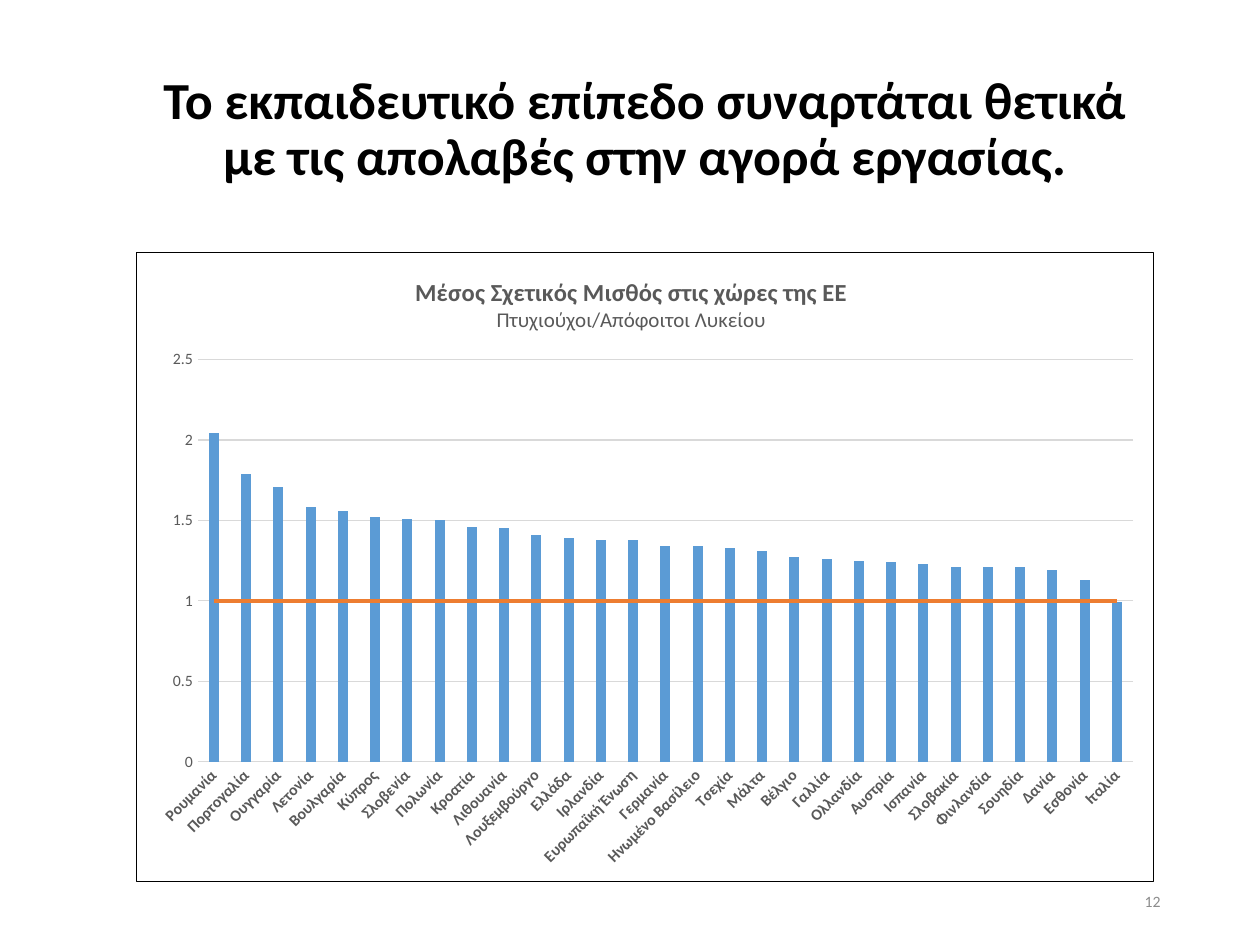
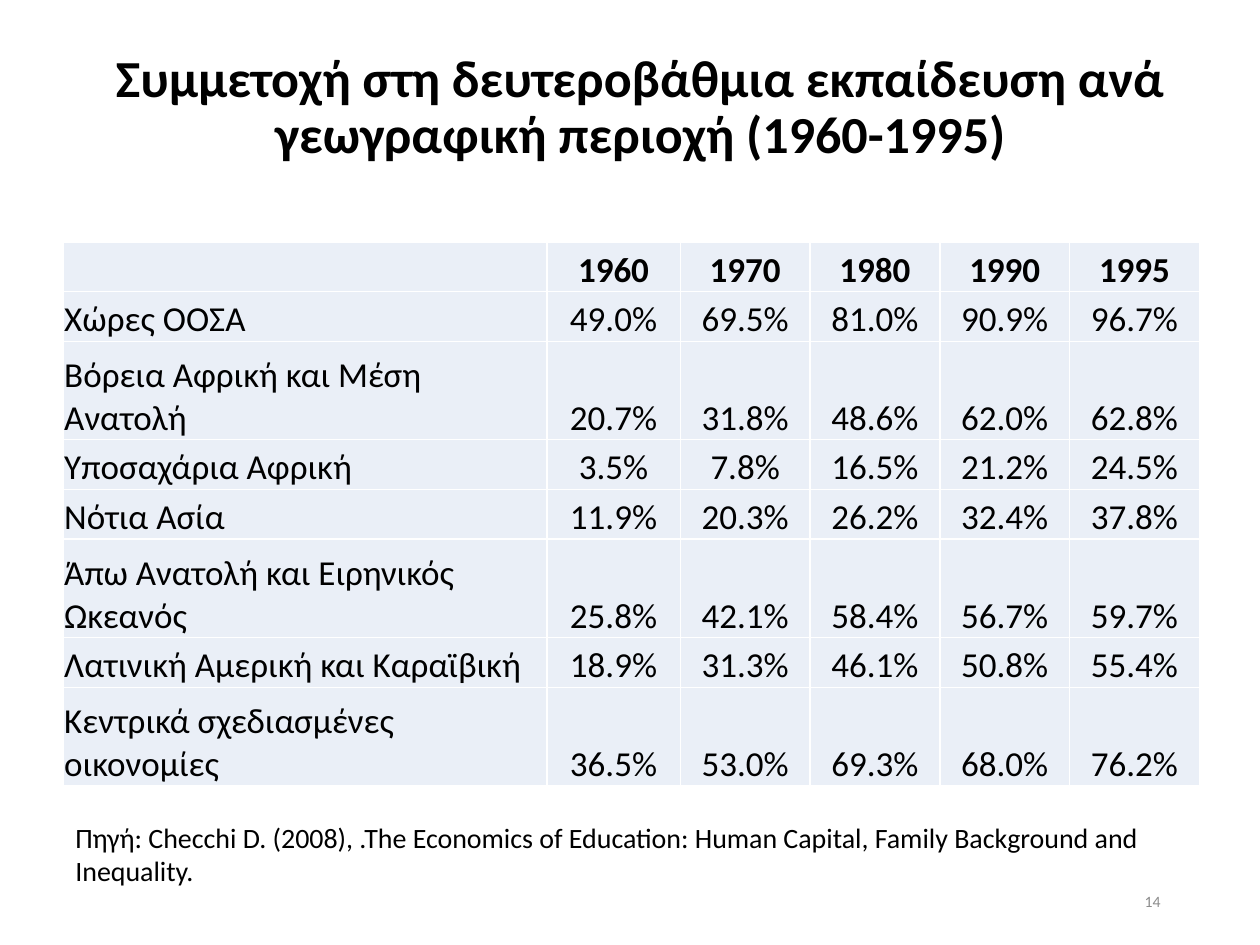
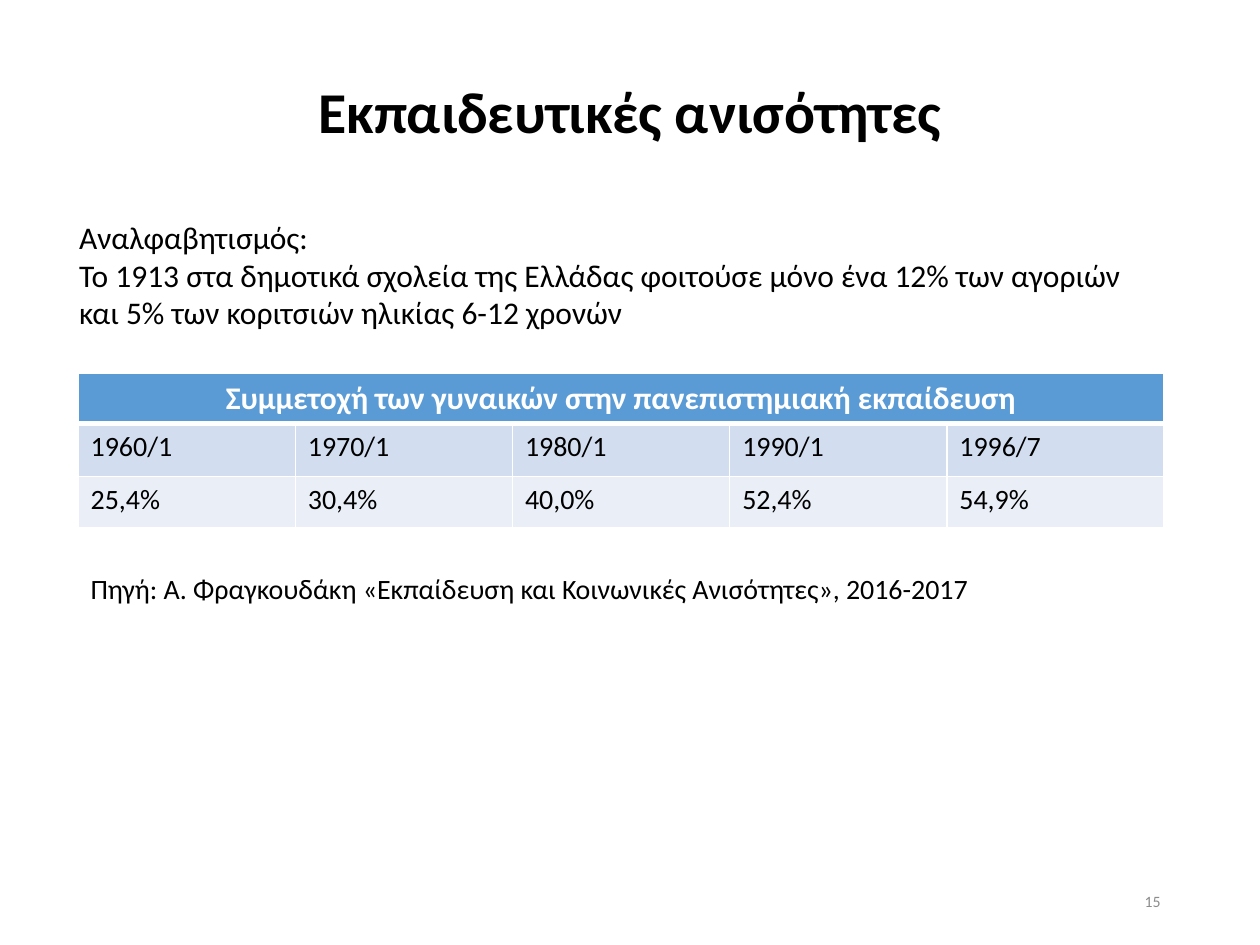
"""Build three slides on earnings, school enrolment and inequality in education."""
from copy import deepcopy
from dataclasses import dataclass

from lxml import etree
from pptx import Presentation
from pptx.chart.data import CategoryChartData
from pptx.dml.color import RGBColor
from pptx.enum.chart import XL_CHART_TYPE, XL_MARKER_STYLE, XL_TICK_MARK
from pptx.enum.text import MSO_ANCHOR, PP_ALIGN
from pptx.oxml import parse_xml
from pptx.oxml.ns import nsdecls, qn
from pptx.util import Inches, Pt

LEFT, CENTER, RIGHT = PP_ALIGN.LEFT, PP_ALIGN.CENTER, PP_ALIGN.RIGHT
TOP, MIDDLE, BOTTOM = MSO_ANCHOR.TOP, MSO_ANCHOR.MIDDLE, MSO_ANCHOR.BOTTOM
COLUMNS, LINE = XL_CHART_TYPE.COLUMN_CLUSTERED, XL_MARKER_STYLE.NONE
NO_TICKS = XL_TICK_MARK.NONE


@dataclass(frozen=True)
class Theme:
    font: str = "Calibri"
    black: RGBColor = RGBColor(0, 0, 0)
    white: RGBColor = RGBColor(0xFF, 0xFF, 0xFF)
    gray: RGBColor = RGBColor(0x8C, 0x8C, 0x8C)
    chart_text: RGBColor = RGBColor(0x59, 0x59, 0x59)
    grid: RGBColor = RGBColor(0xD9, 0xD9, 0xD9)
    blue: RGBColor = RGBColor(0x5B, 0x9B, 0xD5)
    orange: RGBColor = RGBColor(0xED, 0x7D, 0x31)
    band: RGBColor = RGBColor(0xD2, 0xDE, 0xEF)
    pale: RGBColor = RGBColor(0xEA, 0xEF, 0xF7)
    heading: float = 33
    long_heading: float = 29.7
    table: float = 20
    body: float = 18
    source: float = 16
    chart_title: float = 14
    chart_subtitle: float = 12
    chart: float = 10
    small: float = 9


theme = Theme()
presentation = Presentation()
presentation.slide_width, presentation.slide_height = Inches(10), Inches(7.5)
column = presentation.slide_width / 100
row = presentation.slide_height / 75


def add_text(slide, box, lines, size, color=theme.black, bold=False,
             align=LEFT, anchor=TOP, spacing=1.0):
    """Add a text box whose place is given in grid columns and rows."""
    left, top, width, height = box
    shape = slide.shapes.add_textbox(int(left * column), int(top * row),
                                     int(width * column), int(height * row))
    frame = shape.text_frame
    frame.word_wrap = True
    frame.vertical_anchor = anchor
    frame.text = "\n".join(lines)
    for paragraph in frame.paragraphs:
        paragraph.alignment = align
        paragraph.line_spacing = spacing
        paragraph.font.name, paragraph.font.size = theme.font, Pt(size)
        paragraph.font.bold, paragraph.font.color.rgb = bold, color


def fill_cell(cell, text, fill, size, color=theme.black, bold=False,
              align=LEFT, top_line=1, bottom_line=1):
    """Write, colour and border one table cell."""
    cell.text = text
    paragraph = cell.text_frame.paragraphs[0]
    paragraph.alignment = align
    paragraph.font.name, paragraph.font.size = theme.font, Pt(size)
    paragraph.font.bold, paragraph.font.color.rgb = bold, color
    cell.fill.solid()
    cell.fill.fore_color.rgb = fill
    properties = cell._tc.get_or_add_tcPr()
    widths = {"lnL": 1, "lnR": 1, "lnT": top_line, "lnB": bottom_line}
    for position, (edge, width) in enumerate(widths.items()):
        properties.insert(position, parse_xml(
            f'<a:{edge} {nsdecls("a")} w="{Pt(width)}"><a:solidFill>'
            f'<a:srgbClr val="{theme.white}"/></a:solidFill></a:{edge}>'))


pages = [
    ("Το εκπαιδευτικό επίπεδο συναρτάται θετικά με τις απολαβές στην αγορά εργασίας.",
     (10.8, 4, 80.8, 12.7), theme.long_heading, "12"),
    ("Συμμετοχή στη δευτεροβάθμια εκπαίδευση ανά γεωγραφική περιοχή (1960-1995)",
     (5, 4, 91.7, 9.3), theme.long_heading, "14"),
    ("Εκπαιδευτικές ανισότητες", (6.9, 4, 86.2, 10.2), theme.heading, "15"),
]
slides = []
for heading, box, size, number in pages:
    slide = presentation.slides.add_slide(presentation.slide_layouts[6])
    add_text(slide, box, [heading], size, bold=True, align=CENTER, anchor=MIDDLE, spacing=0.9)
    add_text(slide, (70.6, 69.5, 22.5, 4), [number], theme.small, theme.gray,
             align=RIGHT, anchor=MIDDLE)
    slides.append(slide)
wage_slide, enrolment_slide, inequality_slide = slides

wages = {
    "Ρουμανία": 2.04, "Πορτογαλία": 1.79, "Ουγγαρία": 1.71, "Λετονία": 1.58,
    "Βουλγαρία": 1.56, "Κύπρος": 1.52, "Σλοβενία": 1.51, "Πολωνία": 1.5,
    "Κροατία": 1.46, "Λιθουανία": 1.45, "Λουξεμβούργο": 1.41, "Ελλάδα": 1.39,
    "Ιρλανδία": 1.38, "Ευρωπαϊκή Ένωση": 1.38, "Γερμανία": 1.34,
    "Ηνωμένο Βασίλειο": 1.34, "Τσεχία": 1.33, "Μάλτα": 1.31, "Βέλγιο": 1.27,
    "Γαλλία": 1.26, "Ολλανδία": 1.25, "Αυστρία": 1.24, "Ισπανία": 1.23,
    "Σλοβακία": 1.21, "Φινλανδία": 1.21, "Σουηδία": 1.21, "Δανία": 1.19,
    "Εσθονία": 1.13, "Ιταλία": 0.99,
}
chart_data = CategoryChartData()
chart_data.categories = list(wages)
chart_data.add_series("Series 1", list(wages.values()))
chart_data.add_series("Series 2", [1] * len(wages))
chart = wage_slide.shapes.add_chart(
    COLUMNS, int(10.8 * column), int(20 * row), int(80.8 * column), int(50 * row),
    chart_data).chart
chart.has_legend = False
chart.font.name, chart.font.size = theme.font, Pt(theme.chart)
chart.font.color.rgb = theme.black

title_frame = chart.chart_title.text_frame
title_frame.text = "Μέσος Σχετικός Μισθός στις χώρες της ΕΕ\nΠτυχιούχοι/Απόφοιτοι Λυκείου"
title_styles = [(theme.chart_title, True), (theme.chart_subtitle, False)]
for paragraph, (size, bold) in zip(title_frame.paragraphs, title_styles):
    paragraph.alignment = CENTER
    paragraph.font.name, paragraph.font.size = theme.font, Pt(size)
    paragraph.font.bold, paragraph.font.color.rgb = bold, theme.chart_text

for axis, bold in ((chart.category_axis, True), (chart.value_axis, False)):
    axis.major_tick_mark = axis.minor_tick_mark = NO_TICKS
    font = axis.tick_labels.font
    font.name, font.size, font.bold = theme.font, Pt(theme.small), bold
    font.color.rgb = theme.chart_text
value_axis = chart.value_axis
value_axis.minimum_scale, value_axis.maximum_scale, value_axis.major_unit = 0, 2.5, 0.5
value_axis.tick_labels.number_format = "General"
value_axis.tick_labels.number_format_is_linked = False
value_axis.format.line.fill.background()
for line in (chart.category_axis.format.line, value_axis.major_gridlines.format.line):
    line.color.rgb, line.width = theme.grid, Pt(0.75)
label_body = chart.category_axis._element.find(".//" + qn("a:bodyPr"))
label_body.set("rot", "-2700000")
label_body.set("vert", "horz")

bar_plot = chart.plots[0]
bar_plot.gap_width, bar_plot.overlap, bar_plot.vary_by_categories = 219, -27, False
bar_plot.series[0].format.fill.solid()
bar_plot.series[0].format.fill.fore_color.rgb = theme.blue

chart_space = chart._chartSpace
bar_element = chart_space.find(".//" + qn("c:barChart"))
baseline_element = bar_element.findall(qn("c:ser"))[1]
for element in baseline_element.findall(qn("c:invertIfNegative")):
    baseline_element.remove(element)
line_element = parse_xml(
    f'<c:lineChart {nsdecls("c")}><c:grouping val="standard"/><c:varyColors val="0"/></c:lineChart>')
line_element.append(baseline_element)
etree.SubElement(line_element, qn("c:marker")).set("val", "1")
for axis_id in bar_element.findall(qn("c:axId")):
    line_element.append(deepcopy(axis_id))
bar_element.addnext(line_element)
baseline = chart.plots[1].series[0]
baseline.format.line.color.rgb, baseline.format.line.width = theme.orange, Pt(2.25)
baseline.marker.style, baseline.smooth = LINE, False

layouts = [
    ("c:title", 1, {"xMode": "edge", "yMode": "edge", "x": 0.27, "y": 0.03}),
    ("c:plotArea", 0, {"layoutTarget": "inner", "xMode": "edge", "yMode": "edge",
                       "x": 0.06, "y": 0.17, "w": 0.92, "h": 0.64}),
]
for tag, position, settings in layouts:
    parent = chart_space.find(".//" + qn(tag))
    for element in parent.findall(qn("c:layout")):
        parent.remove(element)
    layout = parse_xml(f'<c:layout {nsdecls("c")}><c:manualLayout/></c:layout>')
    for name, value in settings.items():
        etree.SubElement(layout[0], qn("c:" + name)).set("val", str(value))
    parent.insert(position, layout)
chart_space.find(qn("c:chart")).addnext(parse_xml(
    f'<c:spPr {nsdecls("c", "a")}><a:solidFill><a:srgbClr val="{theme.white}"/></a:solidFill>'
    f'<a:ln w="{Pt(0.75)}"><a:solidFill><a:srgbClr val="{theme.black}"/></a:solidFill></a:ln></c:spPr>'))

enrolment = [
    ("", "1960", "1970", "1980", "1990", "1995"),
    ("Χώρες ΟΟΣΑ", "49.0%", "69.5%", "81.0%", "90.9%", "96.7%"),
    ("Βόρεια Αφρική και Μέση Ανατολή", "20.7%", "31.8%", "48.6%", "62.0%", "62.8%"),
    ("Υποσαχάρια Αφρική", "3.5%", "7.8%", "16.5%", "21.2%", "24.5%"),
    ("Νότια Ασία", "11.9%", "20.3%", "26.2%", "32.4%", "37.8%"),
    ("Άπω Ανατολή και Ειρηνικός Ωκεανός", "25.8%", "42.1%", "58.4%", "56.7%", "59.7%"),
    ("Λατινική Αμερική και Καραϊβική", "18.9%", "31.3%", "46.1%", "50.8%", "55.4%"),
    ("Κεντρικά σχεδιασμένες οικονομίες", "36.5%", "53.0%", "69.3%", "68.0%", "76.2%"),
]
table = enrolment_slide.shapes.add_table(
    len(enrolment), 6, int(5 * column), int(19.2 * row), int(90 * column), int(43.3 * row)).table
table.first_row = table.horz_banding = False
for table_column, width in zip(table.columns, [38.4, 10.6] + [10.3] * 4):
    table_column.width = int(width * column)
for row_index, values in enumerate(enrolment):
    two_lines = row_index in (2, 5, 7)
    table.rows[row_index].height = int((7.8 if two_lines else 3.95) * row)
    for column_index, value in enumerate(values):
        cell = table.cell(row_index, column_index)
        fill_cell(cell, value, theme.pale, theme.table, bold=row_index == 0,
                  align=CENTER if column_index else LEFT)
        cell.vertical_anchor = BOTTOM
        cell.margin_left = cell.margin_right = cell.margin_top = Inches(0.01)
        cell.margin_bottom = 0
add_text(enrolment_slide, (5, 64.6, 91.7, 6.4),
         ["Πηγή: Checchi D. (2008), .The Economics of Education: Human Capital, "
          "Family Background and Inequality."], theme.source)

participation = [
    ("1960/1", "1970/1", "1980/1", "1990/1", "1996/7"),
    ("25,4%", "30,4%", "40,0%", "52,4%", "54,9%"),
]
table = inequality_slide.shapes.add_table(
    3, 5, int(6.2 * column), int(29.6 * row), int(86.2 * column), int(12.3 * row)).table
table.first_row = table.horz_banding = False
for table_row, height in zip(table.rows, (4, 4.2, 4.1)):
    table_row.height = int(height * row)
header = "Συμμετοχή των γυναικών στην πανεπιστημιακή εκπαίδευση"
for column_index in range(5):
    fill_cell(table.cell(0, column_index), "" if column_index else header, theme.blue,
              theme.body, theme.white, True, CENTER, bottom_line=3)
    fill_cell(table.cell(1, column_index), participation[0][column_index], theme.band,
              theme.source, top_line=3)
    fill_cell(table.cell(2, column_index), participation[1][column_index], theme.pale,
              theme.source)
table.cell(0, 0).merge(table.cell(0, 4))
add_text(inequality_slide, (6.2, 44.9, 82.5, 3.7),
         ["Πηγή: Α. Φραγκουδάκη «Εκπαίδευση και Κοινωνικές Ανισότητες», 2016-2017"],
         theme.source)
add_text(inequality_slide, (5.3, 16.8, 88, 10.1),
         ["Αναλφαβητισμός:",
          "Το 1913 στα δημοτικά σχολεία της Ελλάδας φοιτούσε μόνο ένα 12% των αγοριών "
          "και 5% των κοριτσιών ηλικίας 6-12 χρονών"], theme.body)

presentation.save("out.pptx")
